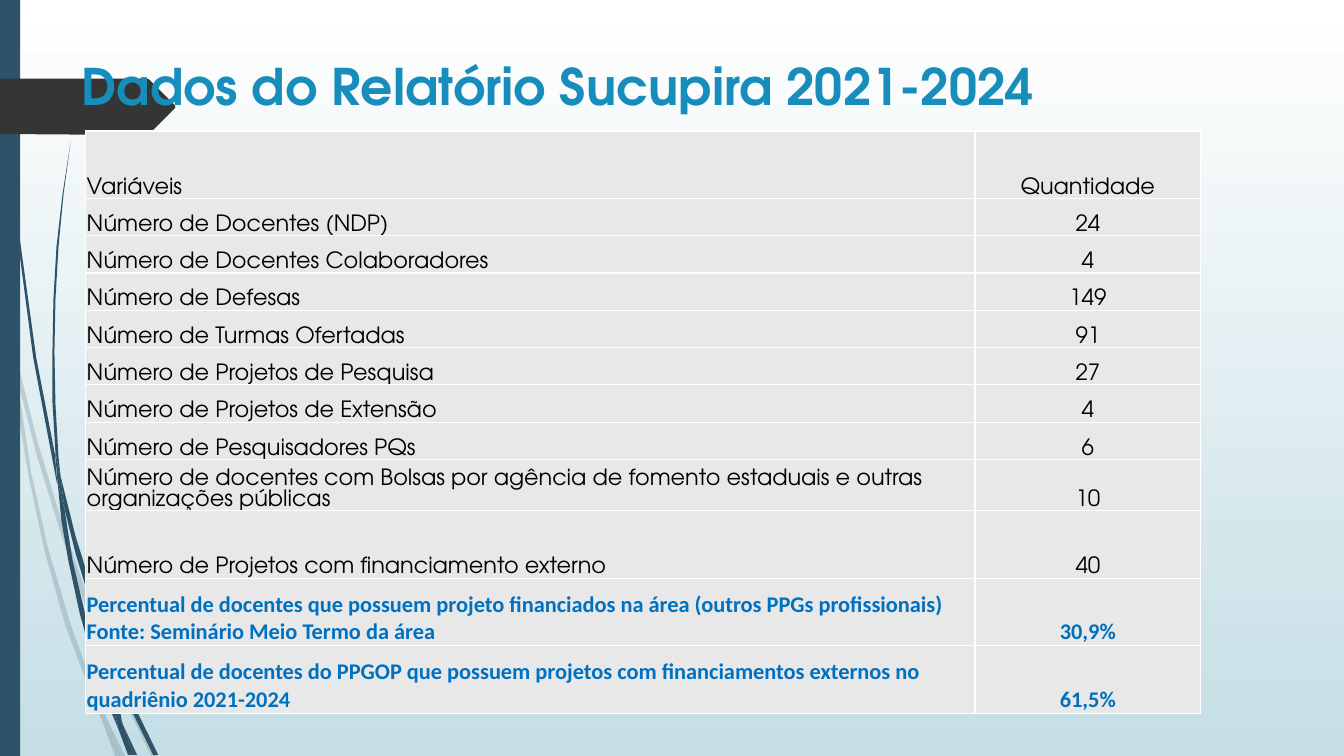
from lxml import etree
from pptx import Presentation
from pptx.dml.color import RGBColor
from pptx.enum.shapes import MSO_SHAPE
from pptx.enum.text import MSO_ANCHOR, PP_ALIGN
from pptx.oxml.ns import qn
from pptx.util import Inches, Pt

RECTANGLE = MSO_SHAPE.RECTANGLE
TOP, BOTTOM = MSO_ANCHOR.TOP, MSO_ANCHOR.BOTTOM
LEFT, CENTER = PP_ALIGN.LEFT, PP_ALIGN.CENTER
HEADING_FONT, EMPHASIS_FONT = "TeX Gyre Adventor", "Calibri"
COLORS = {
    "white": "FFFFFF", "mist": "C5DEE5", "navy": "2E5369", "charcoal": "353535",
    "title": "178DBB", "cell": "E8E8E8", "black": "000000", "emphasis": "0070C0",
}

PALE_STEMS = [
    [(0.11, 3.5), (0.09, 3.22), (0, 2.82), (0, 2.99), (0.1, 3.44)],
    [(0.58, 5.22), (0.84, 5.99), (0.85, 5.86), (0.62, 5.2), (0.36, 4.34), (0.14, 3.45),
     (0.17, 3.76), (0.36, 4.5)],
    [(0.92, 6.07), (0.88, 5.96), (0.88, 6.1), (1.23, 6.94), (1.5, 7.5), (1.55, 7.5),
     (1.27, 6.92)],
    [(1.19, 7.5), (1.24, 7.5), (1.05, 7.11)],
    [(0.93, 6.83), (0.7, 6.19), (0.48, 5.45), (0.31, 4.69), (0.17, 3.76), (0.11, 3.5),
     (0.18, 4.1), (0.28, 4.7), (0.44, 5.46), (0.65, 6.21), (0.92, 6.93), (1.01, 7.14),
     (0.99, 7.07)],
    [(0.84, 5.99), (0.87, 6.46), (0.93, 6.83), (0.96, 6.92), (1.05, 7.11), (1.03, 7.06),
     (0.91, 6.46), (0.88, 6.1), (0.88, 6.08)],
    [(0.88, 5.84), (0.95, 5.22), (1.1, 4.62), (1.32, 4.05), (1.6, 3.49), (2.29, 2.45),
     (2.68, 1.98), (2.9, 1.75), (3.12, 1.54), (3.12, 1.53), (2.89, 1.75), (2.68, 1.97),
     (2.28, 2.44), (1.58, 3.48), (1.29, 4.04), (1.07, 4.61), (0.92, 5.22), (0.85, 5.84),
     (0.85, 5.86), (0.88, 5.96)],
    [(1.01, 7.14), (1.14, 7.5), (1.19, 7.5)],
    [(0.88, 6.08), (0.88, 6.1), (0.88, 5.96), (0.85, 5.86), (0.84, 5.99)],
    [(0.96, 6.92), (0.93, 6.83), (0.99, 7.07), (1.01, 7.14), (1.19, 7.5), (1.05, 7.11)],
]
DARK_STEMS = [
    [(0.07, 1.1), (0.17, 2.33), (0.33, 3.55), (0.56, 4.77), (0.57, 4.81), (0.55, 4.57),
     (0.55, 4.53), (0.36, 3.55), (0.19, 2.32), (0.08, 1.09), (0.05, 0.48), (0.04, 0),
     (0.03, 0), (0.04, 0.48)],
    [(0.88, 5.92), (1.06, 6.45), (1.06, 6.33), (1.06, 6.31), (0.93, 5.9), (0.75, 5.32),
     (0.6, 4.72), (0.64, 5.05), (0.75, 5.49)],
    [(1.13, 6.49), (1.1, 6.41), (1.11, 6.56), (1.32, 7.08), (1.52, 7.49), (1.57, 7.49),
     (1.36, 7.06)],
    [(1.1, 6.91), (0.98, 6.57), (0.84, 6.07), (0.72, 5.56), (0.64, 5.05), (0.57, 4.77),
     (0.61, 5.17), (0.68, 5.57), (0.79, 6.08), (0.93, 6.59), (1.11, 7.08), (1.17, 7.22),
     (1.16, 7.17)],
    [(0.6, 4.72), (0.58, 4.53), (0.55, 4.01), (0.54, 3.49), (0.55, 2.97), (0.58, 2.45),
     (0.63, 1.93), (0.7, 1.41), (0.62, 1.93), (0.56, 2.45), (0.53, 2.97), (0.52, 3.49),
     (0.52, 3.99), (0.55, 4.49)],
    [(1.33, 7.49), (1.36, 7.49), (1.22, 7.19)],
    [(0.57, 4.77), (0.64, 5.05), (0.6, 4.72), (0.55, 4.49), (0.55, 4.53)],
    [(1.11, 6.33), (1.15, 5.92), (1.25, 5.52), (1.58, 4.76), (2.05, 4.06), (2.31, 3.74),
     (2.45, 3.59), (2.61, 3.44), (2.6, 3.44), (2.45, 3.58), (2.31, 3.73), (2.04, 4.05),
     (1.56, 4.74), (1.22, 5.51), (1.11, 5.91), (1.06, 6.31), (1.1, 6.41)],
    [(1.17, 7.22), (1.27, 7.49), (1.31, 7.49)],
    [(1.06, 6.45), (1.1, 6.91), (1.16, 7.06), (1.22, 7.19), (1.21, 7.16), (1.11, 6.56),
     (1.09, 6.51)],
    [(1.06, 6.45), (1.09, 6.51), (1.11, 6.56), (1.1, 6.41), (1.06, 6.31), (1.06, 6.33)],
    [(1.16, 7.06), (1.1, 6.91), (1.16, 7.17), (1.17, 7.22), (1.3, 7.49), (1.33, 7.49),
     (1.22, 7.19)],
]
SIDE_BAR = [(0, 0), (0.2, 0), (0.2, 7.5), (0, 7.5)]
ARROW_TAB = [(1.73, 1.08), (1.48, 1.33), (1.46, 1.34), (1.36, 1.34), (0, 1.33),
             (0, 0.78), (1.46, 0.78), (1.48, 0.79), (1.73, 1.04), (1.74, 1.06)]

ROWS = [
    ("Variáveis", "Quantidade", 0.67),
    ("Número de Docentes (NDP)", "24", 0.37),
    ("Número de Docentes Colaboradores", "4", 0.37),
    ("Número de Defesas", "149", 0.37),
    ("Número de Turmas Ofertadas", "91", 0.37),
    ("Número de Projetos de Pesquisa", "27", 0.37),
    ("Número de Projetos de Extensão", "4", 0.37),
    ("Número de Pesquisadores PQs", "6", 0.37),
    ("Número de docentes com Bolsas por agência de fomento estaduais e outras "
     "organizações públicas", "10", 0.51),
    ("Número de Projetos com financiamento externo", "40", 0.67),
    ("Percentual de docentes que possuem projeto financiados na área (outros PPGs "
     "profissionais) Fonte: Seminário Meio Termo da área", "30,9%", 0.67),
    ("Percentual de docentes do PPGOP que possuem projetos com financiamentos externos no "
     "quadriênio 2021-2024", "61,5%", 0.67),
]
TIGHT_ROW = 8
FIRST_EMPHASIS_ROW = 10


def paint(shape, color):
    shape.shadow.inherit = False
    shape.fill.solid()
    shape.fill.fore_color.rgb = RGBColor.from_string(COLORS[color])
    shape.line.fill.background()


def add_text(paragraph, text, size, font, color, bold):
    run = paragraph.add_run()
    run.text = text
    run.font.size = Pt(size)
    run.font.name = font
    run.font.bold = bold
    run.font.color.rgb = RGBColor.from_string(COLORS[color])


presentation = Presentation()
presentation.slide_width = Inches(13.33)
presentation.slide_height = Inches(7.5)
slide = presentation.slides.add_slide(presentation.slide_layouts[6])

background = slide.background.fill
background.gradient()
background.gradient_angle = 270
for stop, position, color in zip(background.gradient_stops, (0, 1), ("white", "mist")):
    stop.position = position
    stop.color.rgb = RGBColor.from_string(COLORS[color])

outlines = [(stem, "navy", 20) for stem in PALE_STEMS]
outlines += [(stem, "navy", 100) for stem in DARK_STEMS]
outlines += [(SIDE_BAR, "navy", 100), (ARROW_TAB, "charcoal", 100)]
for points, color, opacity in outlines:
    if points is SIDE_BAR:
        shape = slide.shapes.add_shape(RECTANGLE, 0, 0, Inches(0.2), Inches(7.5))
    else:
        corners = [(round(x * 100), round(y * 100)) for x, y in points]
        builder = slide.shapes.build_freeform(*corners[0], scale=Inches(0.01))
        builder.add_line_segments(corners[1:], close=True)
        shape = builder.convert_to_shape()
    paint(shape, color)
    if opacity < 100:
        fill_color = shape.fill._xPr.find(qn("a:solidFill"))[0]
        etree.SubElement(fill_color, qn("a:alpha"), val=str(opacity * 1000))

title = slide.shapes.add_textbox(Inches(0.71), Inches(0.5), Inches(10.29), Inches(0.96))
title.text_frame.word_wrap = True
title.text_frame.vertical_anchor = TOP
add_text(title.text_frame.paragraphs[0], "Dados do Relatório Sucupira 2021-2024",
         36, HEADING_FONT, "title", True)

table = slide.shapes.add_table(len(ROWS), 2, Inches(0.85), Inches(1.3),
                               Inches(11.06), Inches(5.78)).table
table.columns[0].width = Inches(8.82)
table.columns[1].width = Inches(2.24)
for row_index, (variable, quantity, height) in enumerate(ROWS):
    table.rows[row_index].height = Inches(height)
    emphasized = row_index >= FIRST_EMPHASIS_ROW
    font = EMPHASIS_FONT if emphasized else HEADING_FONT
    color = "emphasis" if emphasized else "black"
    for column_index, (text, alignment) in enumerate([(variable, LEFT), (quantity, CENTER)]):
        cell = table.cell(row_index, column_index)
        cell.vertical_anchor = BOTTOM
        cell.margin_left = cell.margin_right = cell.margin_top = Inches(0.01)
        cell.margin_bottom = 0
        properties = cell._tc.get_or_add_tcPr()
        for side in ("a:lnL", "a:lnR", "a:lnT", "a:lnB"):
            border = etree.SubElement(properties, qn(side), w=str(Pt(1)))
            border_fill = etree.SubElement(border, qn("a:solidFill"))
            etree.SubElement(border_fill, qn("a:srgbClr"), val=COLORS["white"])
        cell.fill.solid()
        cell.fill.fore_color.rgb = RGBColor.from_string(COLORS["cell"])
        paragraph = cell.text_frame.paragraphs[0]
        paragraph.alignment = alignment
        if row_index == TIGHT_ROW:
            paragraph.line_spacing = Pt(15)
        add_text(paragraph, text, 16, font, color, emphasized)

presentation.save("out.pptx")
